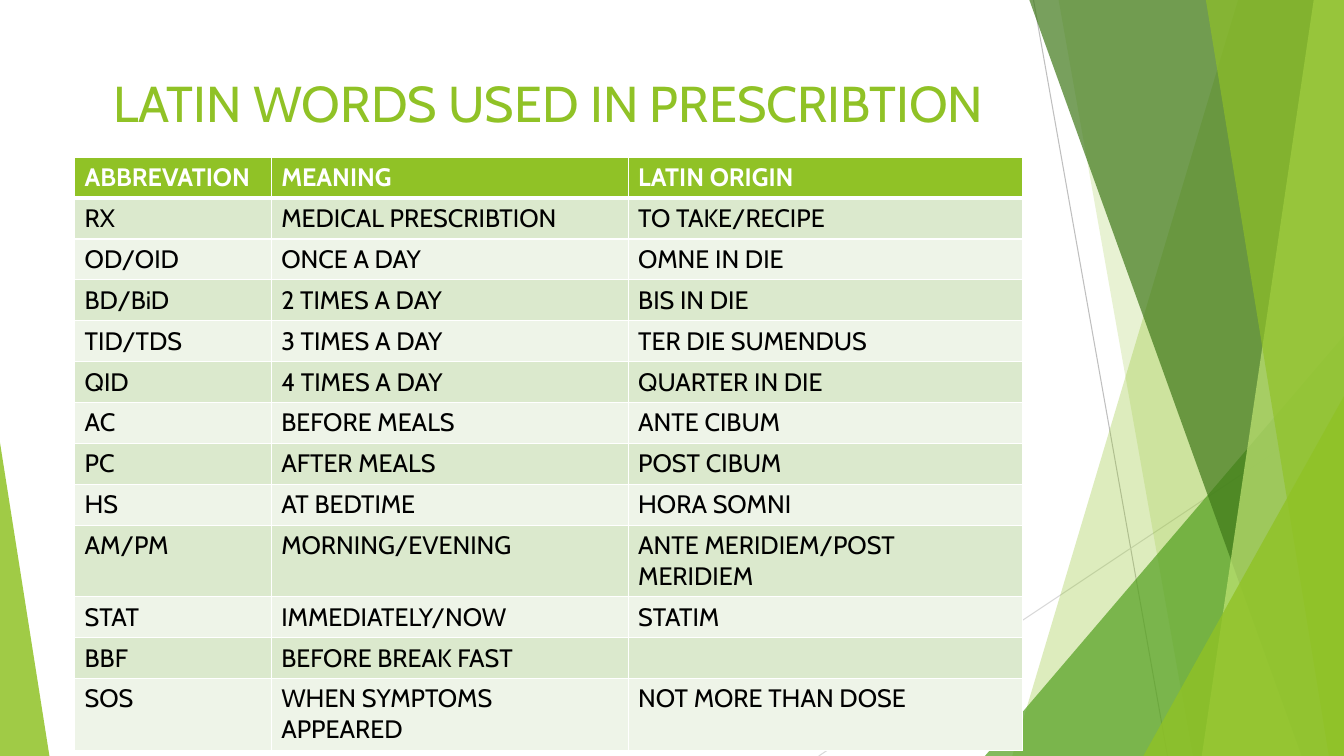
from dataclasses import dataclass

import lxml.etree
import pptx
import pptx.dml.color
import pptx.enum.shapes
import pptx.enum.text
import pptx.oxml
import pptx.oxml.ns
import pptx.util


@dataclass(frozen=True)
class Theme:
    font: str = "Cabin"
    title_size: int = 36
    table_size: int = 18
    accent: str = "90C226"
    leaf: str = "54A021"
    forest: str = "3F7819"
    lime: str = "C0E474"
    white: str = "FFFFFF"
    black: str = "000000"
    odd_row: str = "DBE9CD"
    even_row: str = "EEF4E8"
    dark_line: str = "BFBFBF"
    light_line: str = "D9D9D9"


THEME = Theme()
WIDTH = pptx.util.Inches(13.33)
HEIGHT = pptx.util.Inches(7.5)
TABLE_COLUMNS = (14.63, 26.56, 29.33)
TABLE_ROW = 5.41
TABLE_LEFT = 5.55
TERMS = (
    ("ABBREVATION", "MEANING", "LATIN ORIGIN"),
    ("RX", "MEDICAL PRESCRIBTION", "TO TAKE/RECIPE"),
    ("OD/OID", "ONCE A DAY", "OMNE IN DIE"),
    ("BD/BiD", "2 TIMES A DAY", "BIS IN DIE"),
    ("TID/TDS", "3 TIMES A DAY", "TER DIE SUMENDUS"),
    ("QID", "4 TIMES A DAY", "QUARTER IN DIE"),
    ("AC", "BEFORE MEALS", "ANTE CIBUM"),
    ("PC", "AFTER MEALS", "POST CIBUM"),
    ("HS", "AT BEDTIME", "HORA SOMNI"),
    ("AM/PM", "MORNING/EVENING", "ANTE MERIDIEM/POST MERIDIEM"),
    ("STAT", "IMMEDIATELY/NOW", "STATIM"),
    ("BBF", "BEFORE BREAK FAST", ""),
    ("SOS", "WHEN SYMPTOMS APPEARED", "NOT MORE THAN DOSE"),
)


def across(percent):
    return round(WIDTH * percent / 100)


def down(percent):
    return round(HEIGHT * percent / 100)


def rgb(color):
    return pptx.dml.color.RGBColor.from_string(color)


def set_font(paragraph, size, color, bold=False):
    font = paragraph.font
    font.name = THEME.font
    font.size = pptx.util.Pt(size)
    font.bold = bold
    font.color.rgb = rgb(color)


def paint(shape, color, opacity):
    shape.shadow.inherit = False
    shape.line.fill.background()
    shape.fill.solid()
    shape.fill.fore_color.rgb = rgb(color)
    color_node = shape.element.spPr.find(".//" + pptx.oxml.ns.qn("a:srgbClr"))
    alpha = lxml.etree.SubElement(color_node, pptx.oxml.ns.qn("a:alpha"))
    alpha.set("val", str(opacity * 1000))


def add_ray(slide, start, end, color):
    ray = slide.shapes.add_connector(
        pptx.enum.shapes.MSO_CONNECTOR.STRAIGHT,
        across(start[0]), down(start[1]), across(end[0]), down(end[1]))
    ray.line.color.rgb = rgb(color)
    ray.line.width = pptx.util.Pt(0.75)
    lxml.etree.SubElement(ray.element.spPr, pptx.oxml.ns.qn("a:effectLst"))


def add_band(slide, top_edge, bottom_edge, color, opacity):
    builder = slide.shapes.build_freeform(across(top_edge), 0)
    corners = ((100, 0), (100, 100), (bottom_edge, 100))
    builder.add_line_segments([(across(x), down(y)) for x, y in corners])
    paint(builder.convert_to_shape(), color, opacity)


def add_corner(slide, left, right, top, peak, color, opacity):
    corner = slide.shapes.add_shape(
        pptx.enum.shapes.MSO_SHAPE.ISOSCELES_TRIANGLE,
        across(left), down(top), across(right - left), down(100 - top))
    corner.adjustments[0] = peak
    paint(corner, color, opacity)


def add_facets(slide):
    add_ray(slide, (76.9, 0), (86.87, 100), THEME.dark_line)
    add_ray(slide, (100, 53.73), (60.92, 100), THEME.light_line)
    add_band(slide, 92.12, 75.32, THEME.accent, 30)
    add_band(slide, 78.77, 88.75, THEME.accent, 20)
    add_corner(slide, 73.29, 100, 44.4, 1, THEME.leaf, 72)
    add_band(slide, 76.59, 96.85, THEME.forest, 70)
    add_band(slide, 97.75, 89.42, THEME.lime, 70)
    add_band(slide, 89.72, 98.87, THEME.accent, 65)
    add_corner(slide, 85.07, 100, 52.4, 1, THEME.accent, 80)
    add_corner(slide, 0, 3.68, 58.53, 0, THEME.accent, 85)


def format_title(slide, text):
    title = slide.shapes.title
    title.left, title.top = across(TABLE_LEFT), down(8.93)
    title.width, title.height = across(sum(TABLE_COLUMNS)), down(19.2)
    frame = title.text_frame
    frame.text = text
    frame.word_wrap = True
    frame.vertical_anchor = pptx.enum.text.MSO_ANCHOR.TOP
    paragraph = frame.paragraphs[0]
    paragraph.alignment = pptx.enum.text.PP_ALIGN.CENTER
    set_font(paragraph, THEME.title_size, THEME.accent)
    title.element.getparent().append(title.element)


def set_borders(cell, top, bottom):
    properties = cell._tc.get_or_add_tcPr()
    for side, points in (("L", 1), ("R", 1), ("T", top), ("B", bottom)):
        properties.append(pptx.oxml.parse_xml(
            f'<a:ln{side} {pptx.oxml.ns.nsdecls("a")} w="{pptx.util.Pt(points)}">'
            f'<a:solidFill><a:srgbClr val="{THEME.white}"/></a:solidFill>'
            f'</a:ln{side}>'))


def fill_cell(cell, text, row):
    header = row == 0
    set_borders(cell, 3 if row == 1 else 1, 3 if header else 1)
    cell.fill.solid()
    stripe = THEME.odd_row if row % 2 else THEME.even_row
    cell.fill.fore_color.rgb = rgb(THEME.accent if header else stripe)
    cell.text = text
    set_font(cell.text_frame.paragraphs[0], THEME.table_size,
             THEME.white if header else THEME.black, header)


def add_terms_table(slide):
    table = slide.shapes.add_table(
        len(TERMS), len(TABLE_COLUMNS), across(TABLE_LEFT), down(20.8),
        across(sum(TABLE_COLUMNS)), down(TABLE_ROW * len(TERMS))).table
    for column, width in zip(table.columns, TABLE_COLUMNS):
        column.width = across(width)
    for row, words in enumerate(TERMS):
        table.rows[row].height = down(TABLE_ROW)
        for column, text in enumerate(words):
            fill_cell(table.cell(row, column), text, row)


def main():
    deck = pptx.Presentation()
    deck.slide_width, deck.slide_height = WIDTH, HEIGHT
    slide = deck.slides.add_slide(deck.slide_layouts.get_by_name("Title Only"))
    add_facets(slide)
    format_title(slide, "LATIN WORDS USED IN PRESCRIBTION")
    add_terms_table(slide)
    deck.save("out.pptx")


if __name__ == "__main__":
    main()
